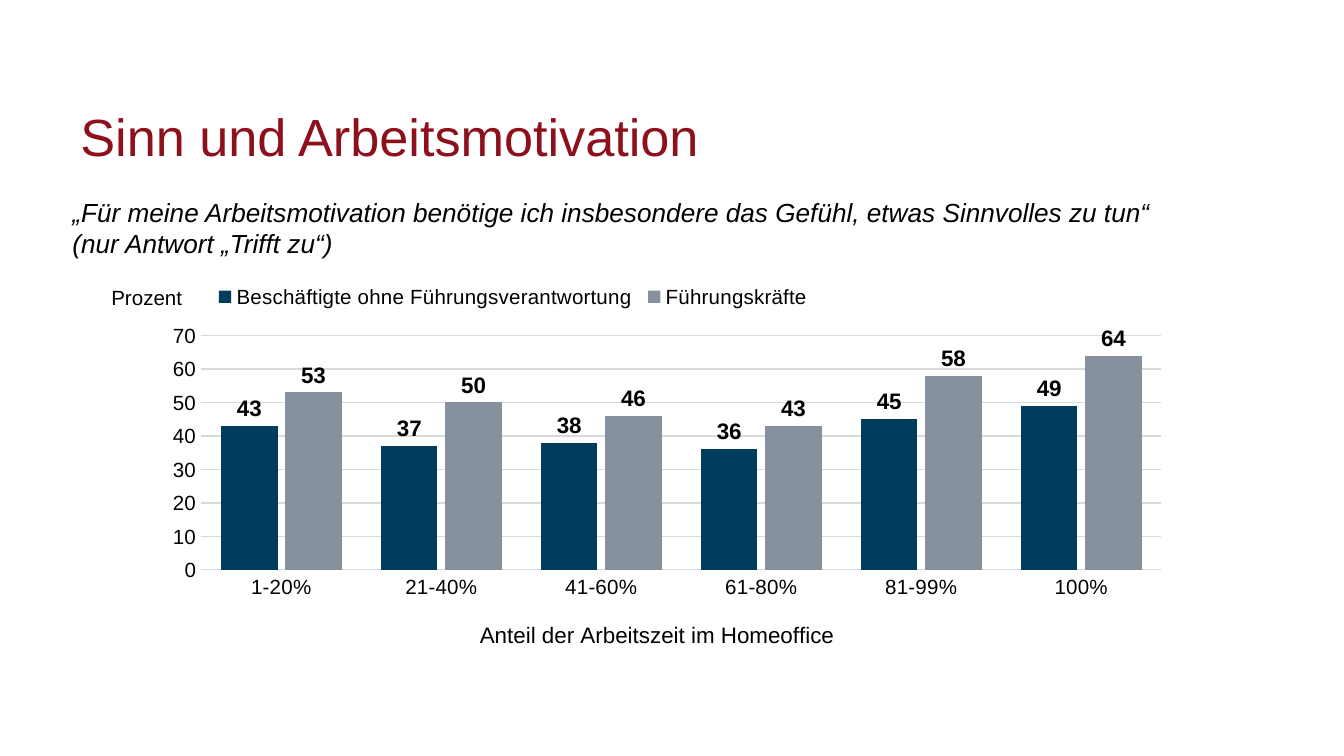
from lxml.etree import SubElement
from pptx import Presentation
from pptx.chart.data import CategoryChartData
from pptx.dml.color import RGBColor
from pptx.enum.chart import XL_CHART_TYPE, XL_LABEL_POSITION, XL_LEGEND_POSITION, XL_TICK_MARK
from pptx.enum.text import MSO_ANCHOR
from pptx.oxml.ns import qn
from pptx.util import Pt

BLACK, GRID = "000000", "D9D9D9"
# text, (left, top, width, height), anchor, font
TEXTS = [
    ("Sinn und Arbeitsmotivation", (36, 48.24, 480.96, 48.96), MSO_ANCHOR.MIDDLE,
     dict(size=28, color="8E101C")),
    ("„Für meine Arbeitsmotivation benötige ich insbesondere das Gefühl, "
     "etwas Sinnvolles zu tun“\v(nur Antwort „Trifft zu“)",
     (31.68, 101.52, 640.8, 43.92), MSO_ANCHOR.TOP, dict(size=14, italic=True)),
    ("Prozent", (52.56, 149.04, 74.88, 20.88), MSO_ANCHOR.TOP, dict(size=11)),
]
CHART_BOX = (66.96, 141.84, 569.52, 214.56)
CHART_TITLE = "Anteil der Arbeitszeit im Homeoffice"
CATEGORIES = ["1-20%", "21-40%", "41-60%", "61-80%", "81-99%", "100%"]
SERIES = [
    ("Beschäftigte ohne Führungsverantwortung", "003C5B", (43, 37, 38, 36, 45, 49)),
    ("Führungskräfte", "87909D", (53, 50, 46, 43, 58, 64)),
]


def rgb(color):
    return RGBColor.from_string(color)


def set_font(font, size, color=BLACK, **formats):
    font.name, font.size = "Arial", Pt(size)
    font.color.rgb = rgb(color)
    for name, value in formats.items():
        setattr(font, name, value)


def set_layout(element, before, **fractions):
    """Place a chart part by fractions of the chart, ahead of the child `before`."""
    for old in element.findall(qn("c:layout")):
        element.remove(old)
    layout = SubElement(element, qn("c:layout"))
    manual = SubElement(layout, qn("c:manualLayout"))
    if "w" in fractions and before is None:
        SubElement(manual, qn("c:layoutTarget")).set("val", "inner")
    for axis in "xy":
        SubElement(manual, qn(f"c:{axis}Mode")).set("val", "edge")
    for name, value in fractions.items():
        SubElement(manual, qn(f"c:{name}")).set("val", str(value))
    if before is None:
        element.insert(0, layout)
    else:
        element.find(qn(before)).addprevious(layout)


def add_text(s, text, box, anchor, font):
    tf = s.shapes.add_textbox(*map(Pt, box)).text_frame
    tf.word_wrap, tf.vertical_anchor = True, anchor
    p = tf.paragraphs[0]
    p.text = text
    for r in p.runs:
        set_font(r.font, **font)


def add_column_chart(s):
    data = CategoryChartData(number_format="#,##0")
    data.categories = CATEGORIES
    for name, _, values in SERIES:
        data.add_series(name, values)
    chart = s.shapes.add_chart(XL_CHART_TYPE.COLUMN_CLUSTERED, *map(Pt, CHART_BOX), data).chart
    set_font(chart.font, 10)

    plot = chart.plots[0]
    plot.gap_width, plot.overlap, plot.vary_by_categories = 70, -14, False
    for series, (_, color, _) in zip(plot.series, SERIES):
        series.format.fill.solid()
        series.format.fill.fore_color.rgb = rgb(color)
        labels = series.data_labels
        labels.show_value, labels.position = True, XL_LABEL_POSITION.OUTSIDE_END
        labels.number_format, labels.number_format_is_linked = "#,##0", False
        set_font(labels.font, 12, bold=True)

    values, categories = chart.value_axis, chart.category_axis
    for axis in (values, categories):
        axis.major_tick_mark = axis.minor_tick_mark = XL_TICK_MARK.NONE
        set_font(axis.tick_labels.font, 11)
    values.minimum_scale, values.maximum_scale, values.major_unit = 0, 70, 10
    values.format.line.fill.background()
    for line in (values.major_gridlines.format.line, categories.format.line):
        line.color.rgb, line.width = rgb(GRID), Pt(0.75)

    chart.has_legend = True
    legend = chart.legend
    legend.position, legend.include_in_layout = XL_LEGEND_POSITION.BOTTOM, False
    set_font(legend.font, 11)

    chart.has_title = True
    title = chart.chart_title
    p = title.text_frame.paragraphs[0]
    p.text = CHART_TITLE
    set_font(p.font, 12, bold=False)
    set_font(p.runs[0].font, 12, bold=False)

    chart_xml = plot._element.getparent()
    set_layout(chart_xml, None, x=0.072, y=0.177, w=0.903, h=0.585)
    set_layout(legend._element, "c:overlay", x=0.08, y=0.04, w=0.57, h=0.08)
    set_layout(title._element, "c:overlay", x=0.33, y=0.88)


prs = Presentation()
prs.slide_width, prs.slide_height = Pt(720), Pt(405)
s = prs.slides.add_slide(prs.slide_layouts[6])
add_column_chart(s)
for item in TEXTS:
    add_text(s, *item)
prs.save("out.pptx")
